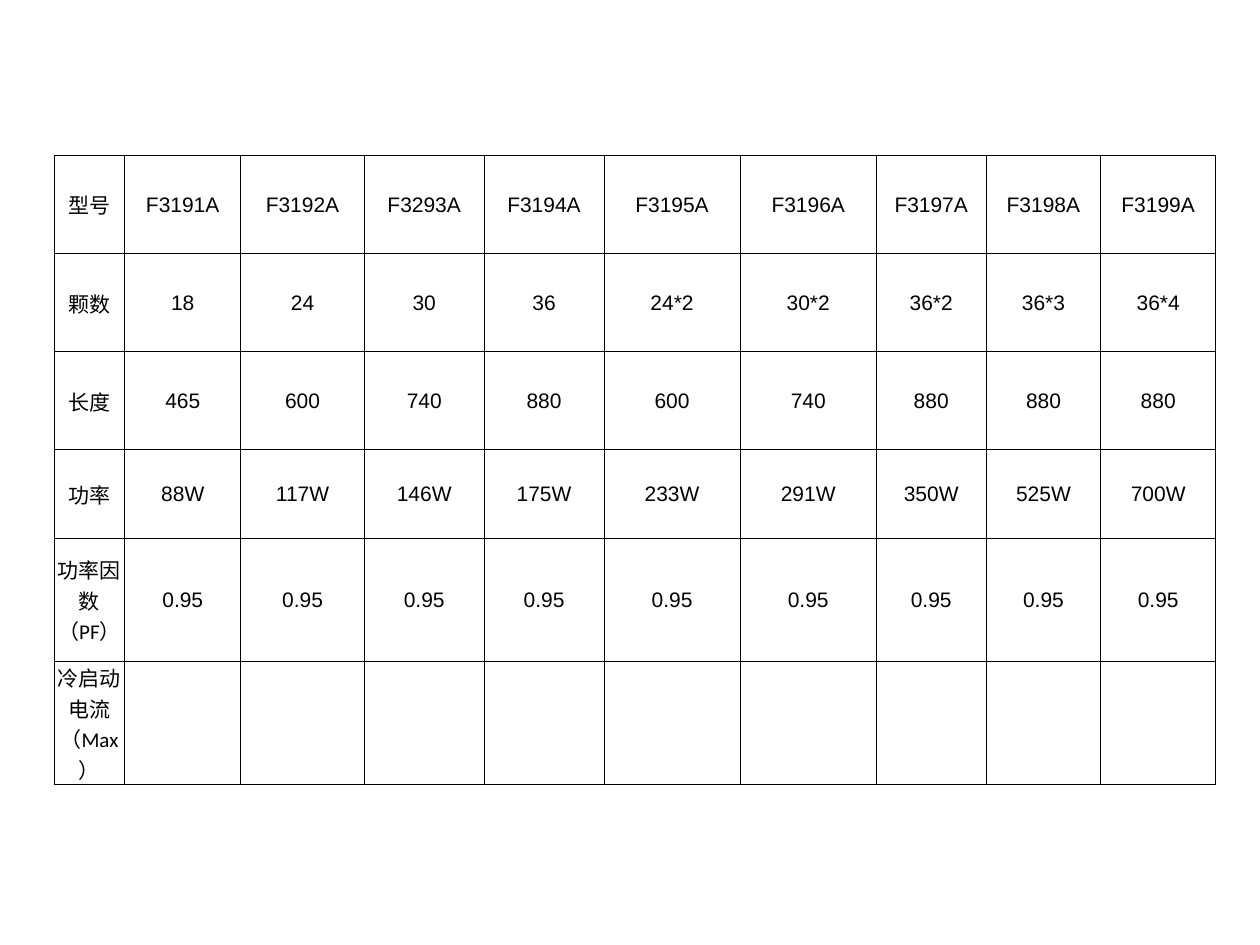
from dataclasses import dataclass

from lxml import etree
from pptx import Presentation
from pptx.dml.color import RGBColor
from pptx.enum.text import MSO_ANCHOR, PP_ALIGN
from pptx.oxml.ns import qn
from pptx.util import Inches, Pt

MIDDLE = MSO_ANCHOR.MIDDLE
CENTER = PP_ALIGN.CENTER


@dataclass(frozen=True)
class Theme:
    ink: str = "000000"
    body_font: str = "Arial"
    long_label_font: str = "Calibri"
    text_size: float = 12
    border_width: float = 0.5
    cell_inset: float = 0.01


THEME = Theme()
SLIDE_WIDTH, SLIDE_HEIGHT = Inches(10), Inches(7.5)

# Relative sizes of the columns and rows within the table's box
COLUMN_WEIGHTS = [0.56, 0.92, 0.98, 0.95, 0.95, 1.08, 1.08, 0.87, 0.91, 0.91]
ROW_WEIGHTS = [0.78] * 3 + [0.7] * 3

MODEL_COUNT = len(COLUMN_WEIGHTS) - 1
SPECIFICATIONS = [
    ["型号", "F3191A", "F3192A", "F3293A", "F3194A", "F3195A", "F3196A",
     "F3197A", "F3198A", "F3199A"],
    ["颗数", "18", "24", "30", "36", "24*2", "30*2", "36*2", "36*3", "36*4"],
    ["长度", "465", "600", "740", "880", "600", "740", "880", "880", "880"],
    ["功率", "88W", "117W", "146W", "175W", "233W", "291W", "350W", "525W", "700W"],
    ["功率因数（PF）"] + ["0.95"] * MODEL_COUNT,
    ["冷启动电流（Max）"] + [""] * MODEL_COUNT,
]
LONG_LABELS = {"功率因数（PF）", "冷启动电流（Max）"}


def share_out(total, weights):
    return [int(total * weight / sum(weights)) for weight in weights]


def draw_borders(cell):
    properties = cell._tc.get_or_add_tcPr()
    for position, side in enumerate(("lnL", "lnR", "lnT", "lnB")):
        line = etree.Element(qn(f"a:{side}"), w=str(Pt(THEME.border_width)))
        fill = etree.SubElement(line, qn("a:solidFill"))
        etree.SubElement(fill, qn("a:srgbClr"), val=THEME.ink)
        properties.insert(position, line)


def fill_cell(cell, text):
    cell.fill.background()
    draw_borders(cell)
    cell.vertical_anchor = MIDDLE
    cell.margin_left = cell.margin_right = cell.margin_top = Inches(THEME.cell_inset)
    cell.margin_bottom = 0
    cell.text = text
    para = cell.text_frame.paragraphs[0]
    para.alignment = CENTER
    para.font.size = Pt(THEME.text_size)
    para.font.name = THEME.long_label_font if text in LONG_LABELS else THEME.body_font
    para.font.color.rgb = RGBColor.from_string(THEME.ink)


def add_specification_table(page, left, top, width, height):
    table = page.shapes.add_table(
        len(ROW_WEIGHTS), len(COLUMN_WEIGHTS), left, top, width, height
    ).table
    table.first_row = table.horz_banding = False
    for column, size in zip(table.columns, share_out(width, COLUMN_WEIGHTS)):
        column.width = size
    for row, size, texts in zip(
        table.rows, share_out(height, ROW_WEIGHTS), SPECIFICATIONS
    ):
        row.height = size
        for cell, text in zip(row.cells, texts):
            fill_cell(cell, text)


def main():
    deck = Presentation()
    deck.slide_width, deck.slide_height = SLIDE_WIDTH, SLIDE_HEIGHT
    page = deck.slides.add_slide(deck.slide_layouts[6])
    add_specification_table(
        page,
        left=int(SLIDE_WIDTH * 0.043),
        top=int(SLIDE_HEIGHT * 0.164),
        width=int(SLIDE_WIDTH * 0.922),
        height=int(SLIDE_HEIGHT * 0.592),
    )
    deck.save("out.pptx")


if __name__ == "__main__":
    main()
